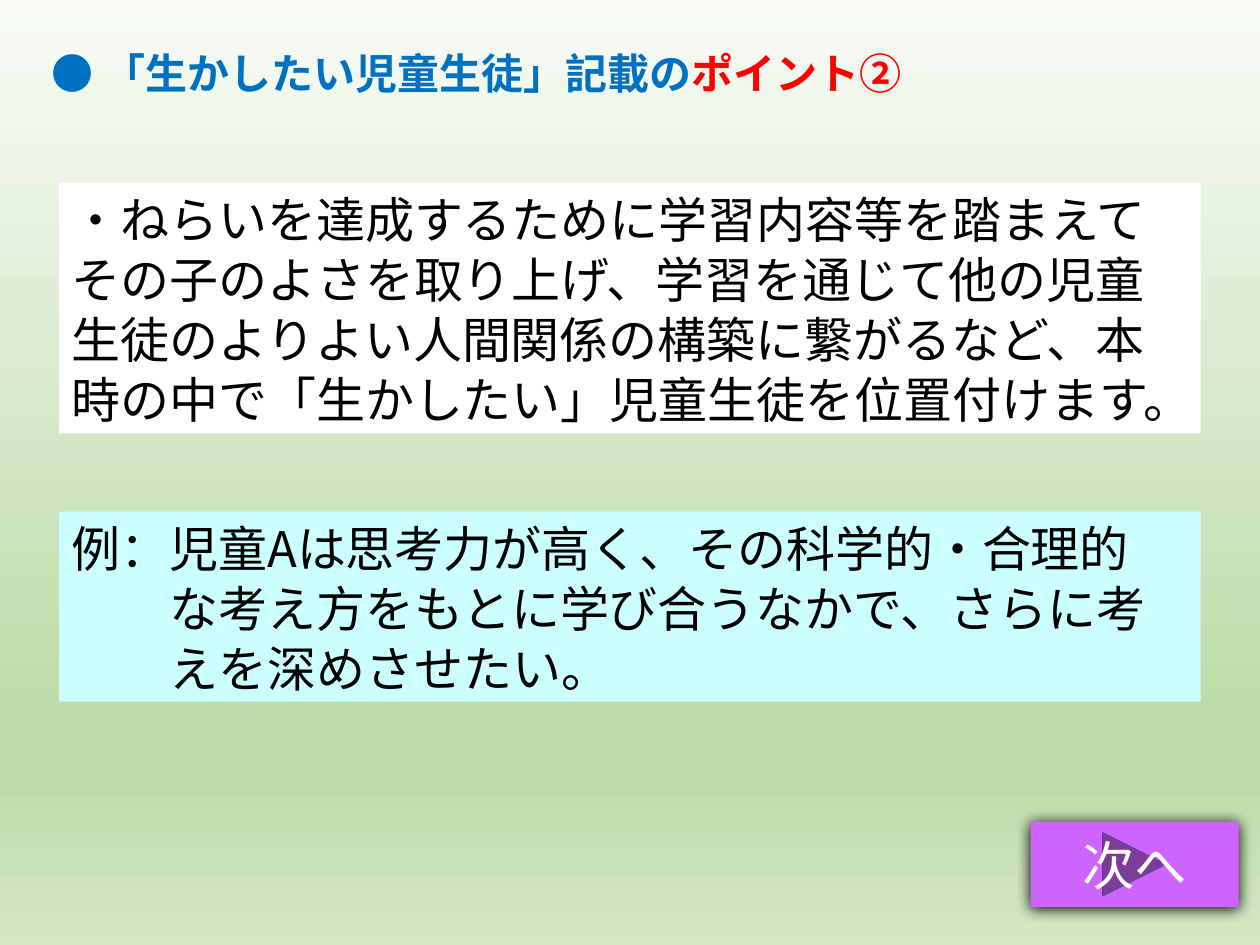
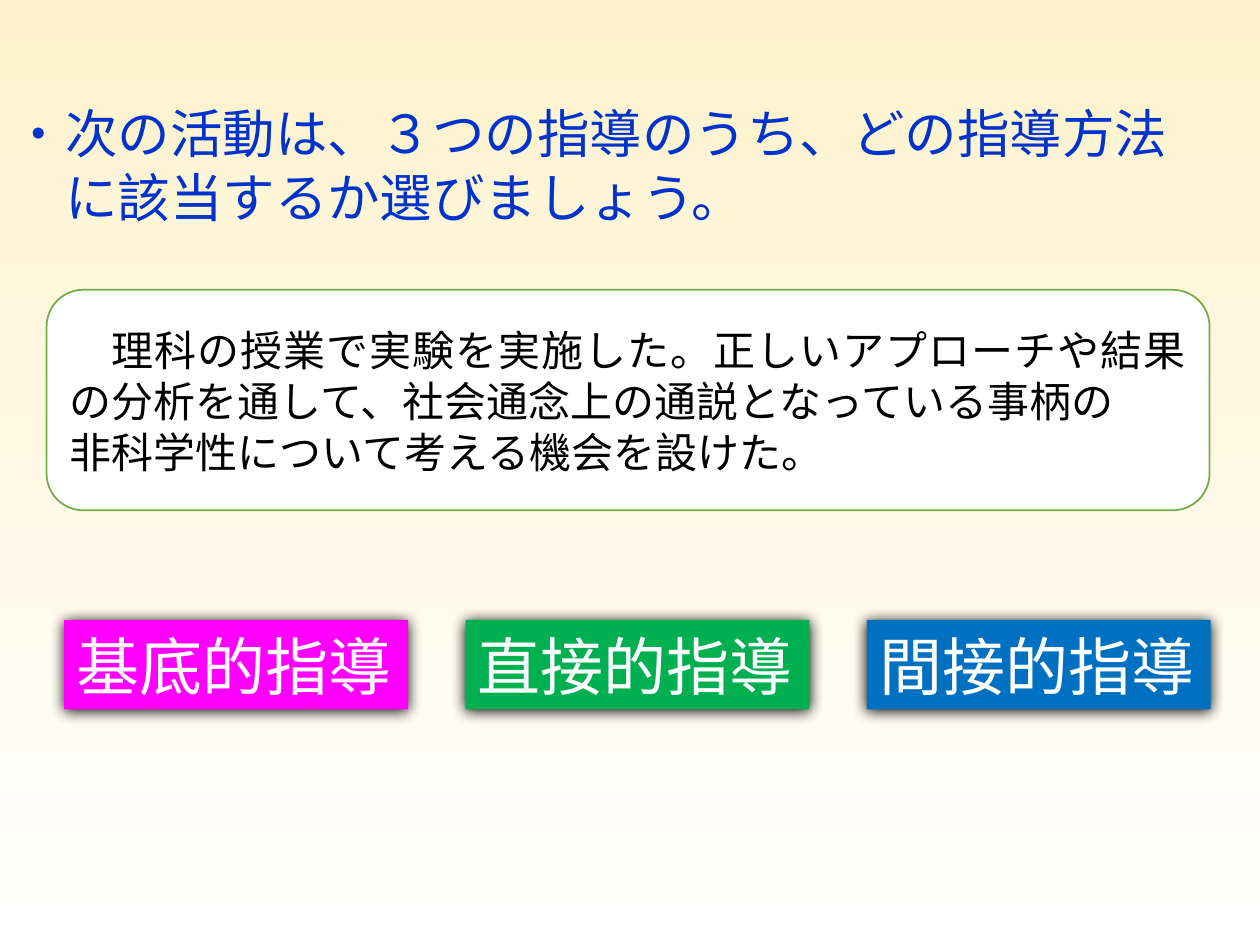
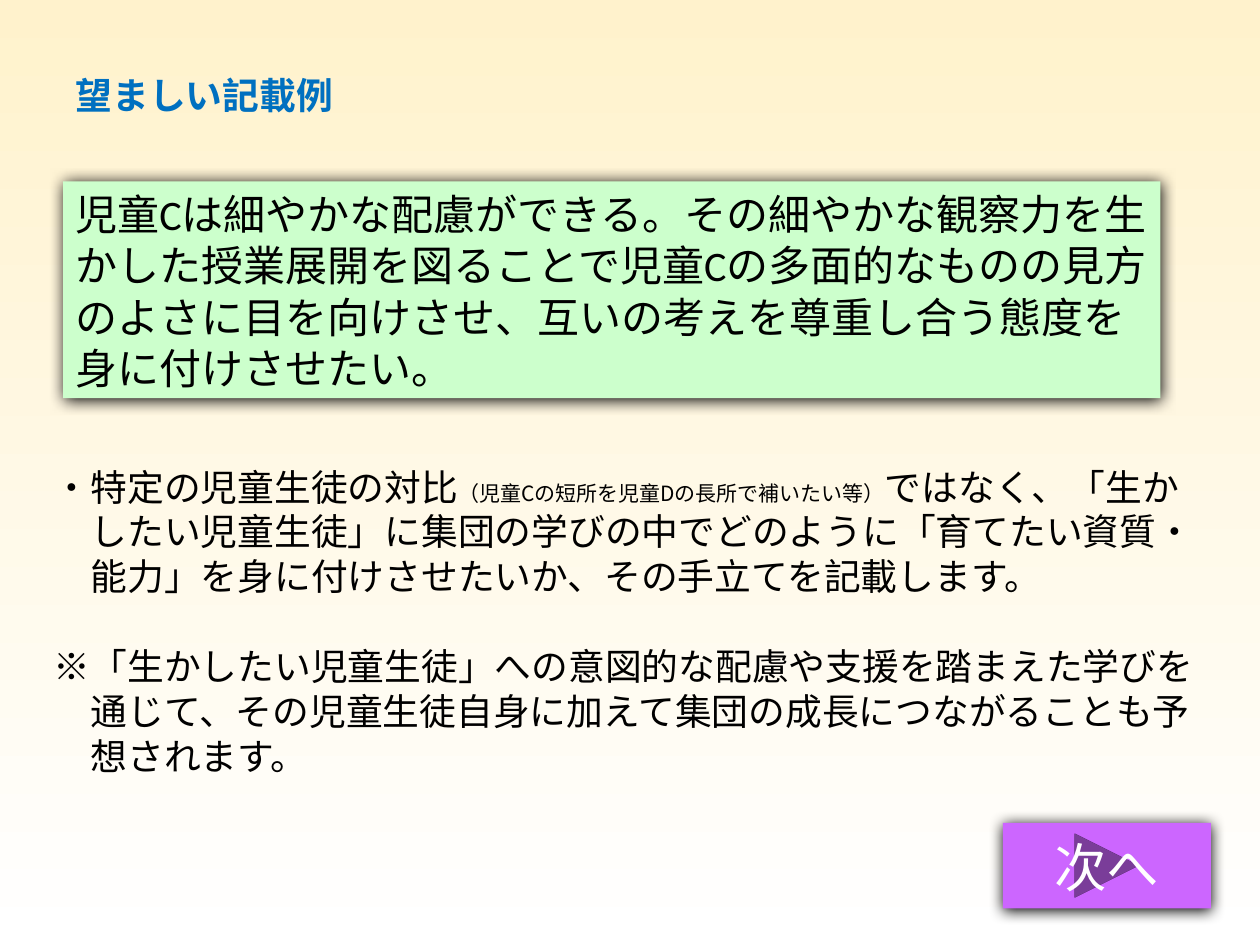
import dataclasses
from typing import Optional

import lxml.etree
import pptx
import pptx.dml.color
import pptx.enum.shapes
import pptx.enum.text
import pptx.oxml
import pptx.oxml.ns
import pptx.util

RGBColor = pptx.dml.color.RGBColor
SHAPE = pptx.enum.shapes.MSO_SHAPE
ALIGN = pptx.enum.text.PP_ALIGN
ANCHOR = pptx.enum.text.MSO_ANCHOR

# Slide size and a grid of 100 columns by 75 rows
WIDTH, HEIGHT = pptx.util.Inches(10), pptx.util.Inches(7.5)
COLUMN, ROW = WIDTH / 100, HEIGHT / 75

# Shared colours and fonts
BLACK = RGBColor(0x00, 0x00, 0x00)
WHITE = RGBColor(0xFF, 0xFF, 0xFF)
RED = RGBColor(0xFF, 0x00, 0x00)
BLUE = RGBColor(0x00, 0x70, 0xC0)
QUESTION_BLUE = RGBColor(0x00, 0x33, 0xCC)
GREEN = RGBColor(0x00, 0xB0, 0x50)
BORDER_GREEN = RGBColor(0x70, 0xAD, 0x47)
MAGENTA = RGBColor(0xFF, 0x00, 0xFF)
PURPLE = RGBColor(0xCC, 0x66, 0xFF)
PALE_CYAN = RGBColor(0xCC, 0xFF, 0xFF)
PALE_GREEN = RGBColor(0xCC, 0xFF, 0xCC)
CREAM = RGBColor(0xFF, 0xF2, 0xCC)
MIST = RGBColor(0xF8, 0xFB, 0xF6)
LEAF = RGBColor(0xBE, 0xDC, 0xAA)
SPRING = RGBColor(0xD4, 0xE8, 0xC6)
JAPANESE_FONT = "Noto Sans CJK JP"
LATIN_FONT = "Calibri"
LINE_HEIGHT = 1.22  # line pitch as a share of the text size

GREEN_STOPS = ((0, MIST), (74, LEAF), (83, LEAF), (100, SPRING))
CREAM_STOPS = ((0, CREAM), (100, WHITE))


@dataclasses.dataclass(frozen=True)
class Area:
    """Left and width in columns, top and height in rows."""
    left: float
    top: float
    width: float
    height: float

    def emu(self) -> tuple[int, ...]:
        return (round(self.left * COLUMN), round(self.top * ROW),
                round(self.width * COLUMN), round(self.height * ROW))


@dataclasses.dataclass(frozen=True)
class Run:
    text: str
    color: Optional[RGBColor] = None
    size: Optional[float] = None


@dataclasses.dataclass(frozen=True)
class Line:
    """A paragraph; margin and first-line indent count characters."""
    runs: tuple[Run, ...]
    margin: float = 0
    first: float = 0
    lines_before: float = 0


@dataclasses.dataclass(frozen=True)
class TextStyle:
    size: float
    color: RGBColor = BLACK
    bold: bool = False
    align: ALIGN = ALIGN.LEFT
    anchor: ANCHOR = ANCHOR.TOP
    wrap: bool = True
    latin: str = JAPANESE_FONT


@dataclasses.dataclass(frozen=True)
class Panel:
    area: Area
    fill: RGBColor
    style: TextStyle
    lines: tuple[Line, ...]
    kind: SHAPE = SHAPE.RECTANGLE
    border: Optional[RGBColor] = None
    shadow: bool = False


def line(text: str, margin: float = 0, first: float = 0, lines_before: float = 0) -> Line:
    return Line((Run(text),), margin, first, lines_before)


def write(frame, lines: tuple[Line, ...], style: TextStyle) -> None:
    frame.auto_size = pptx.enum.text.MSO_AUTO_SIZE.NONE
    frame.word_wrap = style.wrap
    frame.vertical_anchor = style.anchor
    pitch = style.size * LINE_HEIGHT
    for number, entry in enumerate(lines):
        paragraph = frame.paragraphs[0] if number == 0 else frame.add_paragraph()
        properties = paragraph._p.get_or_add_pPr()
        properties.set("marL", str(pptx.util.Pt(entry.margin * style.size)))
        properties.set("indent", str(pptx.util.Pt(entry.first * style.size)))
        paragraph.alignment = style.align
        paragraph.line_spacing = pptx.util.Pt(pitch)
        if entry.lines_before:
            paragraph.space_before = pptx.util.Pt(entry.lines_before * pitch)
        for part in entry.runs:
            run = paragraph.add_run()
            run.text = part.text
            run.font.size = pptx.util.Pt(part.size or style.size)
            run.font.bold = style.bold
            run.font.color.rgb = part.color or style.color
            run.font.name = style.latin
            east_asian = lxml.etree.Element(pptx.oxml.ns.qn("a:ea"), typeface=JAPANESE_FONT)
            run._r.rPr.find(pptx.oxml.ns.qn("a:latin")).addnext(east_asian)


def add_shadow(shape) -> None:
    shape._element.spPr.append(pptx.oxml.parse_xml(
        f'<a:effectLst {pptx.oxml.ns.nsdecls("a")}>'
        f'<a:outerShdw blurRad="{pptx.util.Pt(8.5)}" dist="{pptx.util.Pt(1)}"'
        ' dir="5400000" algn="t" rotWithShape="0">'
        f'<a:srgbClr val="{BLACK}"/></a:outerShdw></a:effectLst>'))


def add_panel(slide, panel: Panel) -> None:
    shape = slide.shapes.add_shape(panel.kind, *panel.area.emu())
    shape.fill.solid()
    shape.fill.fore_color.rgb = panel.fill
    if panel.border:
        shape.line.color.rgb = panel.border
        shape.line.width = pptx.util.Pt(1)
    else:
        shape.line.fill.background()
    if panel.shadow:
        add_shadow(shape)
    else:
        shape.shadow.inherit = False
    write(shape.text_frame, panel.lines, panel.style)


def add_next_button(slide, left: float, top: float) -> None:
    style = TextStyle(30, WHITE, align=ALIGN.CENTER, anchor=ANCHOR.MIDDLE)
    add_panel(slide, Panel(Area(left, top, 16.5, 6.8), PURPLE, style, (line("次へ"),),
                           SHAPE.ACTION_BUTTON_FORWARD_OR_NEXT, shadow=True))


def add_slide(deck, stops, area: Area, title: tuple[Line, ...], style: TextStyle):
    """Title-only slide with a vertical gradient behind it."""
    slide = deck.slides.add_slide(deck.slide_layouts[5])
    marks = "".join(f'<a:gs pos="{share * 1000}"><a:srgbClr val="{color}"/></a:gs>'
                    for share, color in stops)
    slide._element.cSld.insert(0, pptx.oxml.parse_xml(
        f'<p:bg {pptx.oxml.ns.nsdecls("p", "a")}><p:bgPr><a:gradFill rotWithShape="1">'
        f'<a:gsLst>{marks}</a:gsLst><a:lin ang="5400000" scaled="0"/></a:gradFill>'
        '<a:effectLst/></p:bgPr></p:bg>'))
    heading = slide.shapes.title
    heading.left, heading.top, heading.width, heading.height = area.emu()
    write(heading.text_frame, title, style)
    return slide


def build_writing_point(deck) -> None:
    title = Line((Run("● 「生かしたい児童生徒」記載の"), Run("ポイント②", RED)))
    slide = add_slide(deck, GREEN_STOPS, Area(3.1, 3.2, 73.6, 5), (title,),
                      TextStyle(24, BLUE, bold=True))
    body = TextStyle(28)
    add_panel(slide, Panel(Area(4.7, 14.5, 90.6, 19.9), WHITE, body, (
        line("・ねらいを達成するために学習内容等を踏まえてその子のよさを取り上げ、"
             "学習を通じて他の児童生徒のよりよい人間関係の構築に繋がるなど、"
             "本時の中で「生かしたい」児童生徒を位置付けます。"),)))
    add_panel(slide, Panel(Area(4.7, 40.6, 90.6, 15.1), PALE_CYAN, body, (
        line("例：児童Aは思考力が高く、その科学的・合理的"),
        line("な考え方をもとに学び合うなかで、さらに考", margin=2),
        line("えを深めさせたい。", margin=2))))
    add_next_button(slide, 81.8, 65.2)


def build_guidance_quiz(deck) -> None:
    question = (line("・次の活動は、３つの指導のうち、どの指導方法"),
                line("に該当するか選びましょう。", margin=1))
    slide = add_slide(deck, CREAM_STOPS, Area(0, 7.4, 97.6, 11.1), question,
                      TextStyle(30, QUESTION_BLUE))
    add_panel(slide, Panel(
        Area(3.7, 23, 92.3, 17.5), WHITE,
        TextStyle(24, align=ALIGN.JUSTIFY, anchor=ANCHOR.MIDDLE),
        (line("理科の授業で実験を実施した。正しいアプローチや結果の分析を通して、"
              "社会通念上の通説となっている事柄の", first=1),
         line("非科学性について考える機会を設けた。")),
        SHAPE.ROUNDED_RECTANGLE, border=BORDER_GREEN))

    # Three answers with equal gaps
    answers = (("基底的指導", MAGENTA), ("直接的指導", GREEN), ("間接的指導", BLUE))
    left, width, gap = 5.1, 27.3, 4.55
    for number, (guidance, color) in enumerate(answers):
        add_panel(slide, Panel(Area(left + number * (width + gap), 49.2, width, 7.1), color,
                               TextStyle(36, WHITE, wrap=False), (line(guidance),),
                               shadow=True))


def build_good_example(deck) -> None:
    slide = add_slide(deck, CREAM_STOPS, Area(5, 5.2, 22.8, 4.5), (line("望ましい記載例"),),
                      TextStyle(21, BLUE, bold=True, wrap=False))
    add_panel(slide, Panel(Area(5, 14.4, 87.1, 17.2), PALE_GREEN,
                           TextStyle(24, latin=LATIN_FONT), (
        line("児童Cは細やかな配慮ができる。その細やかな観察力を生かした授業展開を図ることで"
             "児童Cの多面的なものの見方のよさに目を向けさせ、"
             "互いの考えを尊重し合う態度を身に付けさせたい。"),), shadow=True))

    # Explanation and remark
    notes = slide.shapes.add_textbox(*Area(3.3, 36.3, 93.3, 25.7).emu())
    write(notes.text_frame, (
        Line((Run("・特定の児童生徒の対比"),
              Run("（児童Cの短所を児童Dの長所で補いたい等）", size=12),
              Run("ではなく、「生か"))),
        line("したい児童生徒」に集団の学びの中でどのように「育てたい資質・", margin=1),
        line("能力」を身に付けさせたいか、その手立てを記載します。", margin=1),
        line("※「生かしたい児童生徒」への意図的な配慮や支援を踏まえた学びを", lines_before=1),
        line("通じて、その児童生徒自身に加えて集団の成長につながることも予", margin=1),
        line("想されます。", margin=1)), TextStyle(21))
    add_next_button(slide, 79.6, 65.3)


def main() -> None:
    deck = pptx.Presentation()
    deck.slide_width, deck.slide_height = WIDTH, HEIGHT
    build_writing_point(deck)
    build_guidance_quiz(deck)
    build_good_example(deck)
    deck.save("out.pptx")


if __name__ == "__main__":
    main()
